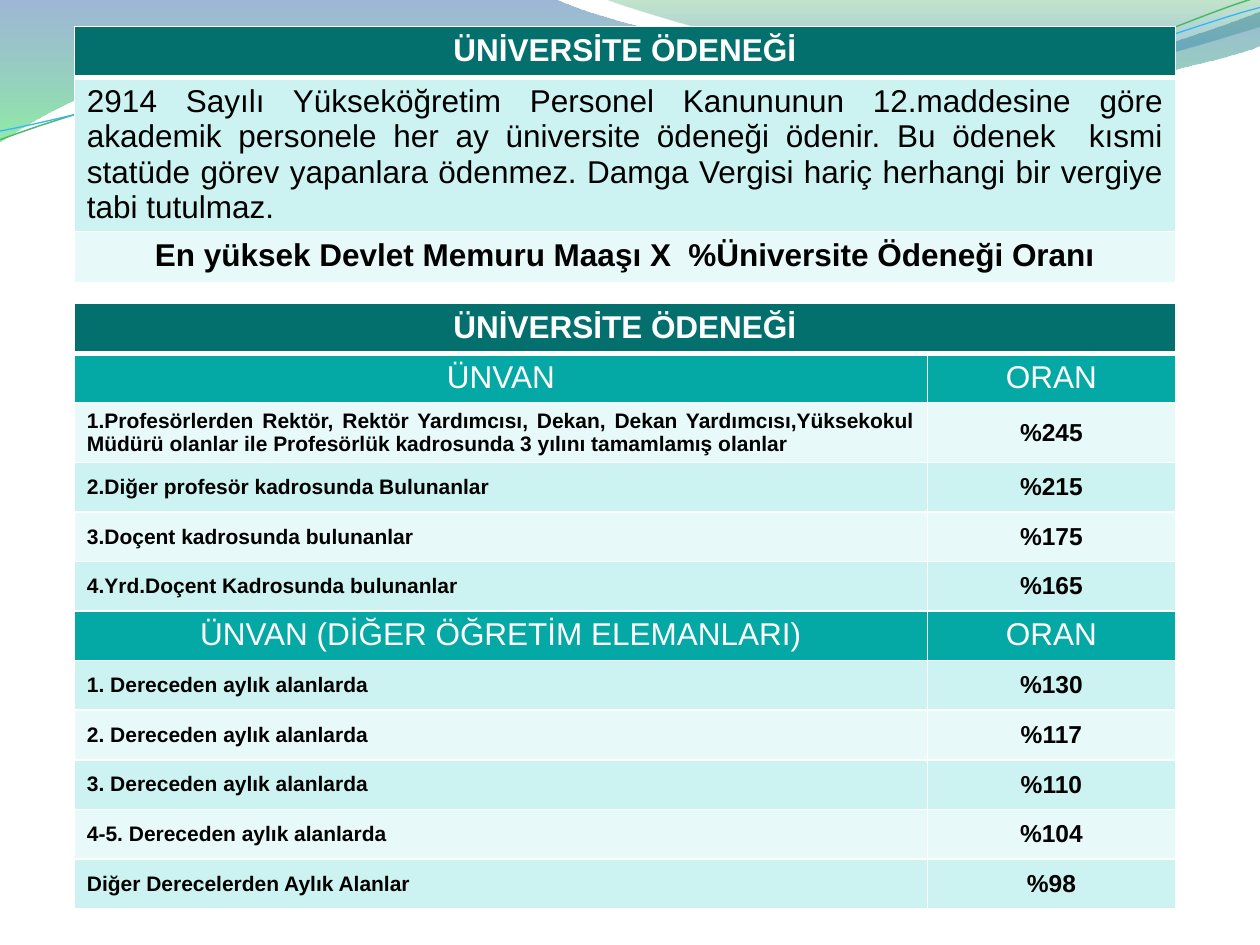
from dataclasses import dataclass
from math import cos, radians, sin
from typing import NamedTuple

from lxml.etree import SubElement
from pptx import Presentation
from pptx.dml.color import RGBColor
from pptx.enum.text import MSO_ANCHOR, PP_ALIGN
from pptx.oxml import parse_xml
from pptx.oxml.ns import nsdecls, qn
from pptx.util import Inches, Pt

HUES = {
    "head": "03706E", "band": "04A8A4", "mint": "CCF3F1", "pale": "E7F9F8",
    "white": "FFFFFF", "black": "000000", "blue": "2960A7", "lime": "35DA5E",
    "green": "36A752", "sky": "2472D3", "leaf": "50B86A", "cyan": "31B6FD",
}
LEFT, MID, FULL = PP_ALIGN.LEFT, PP_ALIGN.CENTER, PP_ALIGN.JUSTIFY
TILT = 2.7


class Stop(NamedTuple):
    at: float
    hue: str
    alpha: int


@dataclass
class Wave:
    start: tuple[float, float]
    curves: list[tuple[float, ...]]
    stops: tuple[Stop, ...] = ()
    hue: str = ""
    width: float = 0


class Text(NamedTuple):
    words: str
    size: int = 18
    bold: bool = True
    align: PP_ALIGN = MID


class Row(NamedTuple):
    fill: str
    cells: list[Text]


def rgb(hue: str) -> RGBColor:
    return RGBColor.from_string(HUES[hue])


def level(x: float, y: float) -> tuple[float, float]:
    turn = radians(TILT)
    dx, dy = x - 5, y - 0.57
    return 5 + dx * cos(turn) - dy * sin(turn), 0.57 + dx * sin(turn) + dy * cos(turn)


def place(wave: Wave, nums: tuple[float, ...]) -> list[tuple[int, int]]:
    pairs = list(zip(nums[::2], nums[1::2]))
    if not wave.stops:
        pairs = [level(x, y) for x, y in pairs]
    return [(Inches(x), Inches(y)) for x, y in pairs]


def draw_wave(slide, wave: Wave) -> None:
    legs = [place(wave, curve) for curve in wave.curves]
    pen = slide.shapes.build_freeform(*place(wave, wave.start)[0])
    pen.add_line_segments([leg[-1] for leg in legs], close=bool(wave.stops))
    shape = pen.convert_to_shape()
    for node, leg in zip(list(shape._element.iter(qn("a:lnTo"))), legs):
        if len(leg) == 3:
            node.tag = qn("a:cubicBezTo")
            for i, (x, y) in enumerate(leg[:2]):
                spot = {"x": str(x - shape.left), "y": str(y - shape.top)}
                node.insert(i, node.makeelement(qn("a:pt"), spot))
    shape.shadow.inherit = False
    if not wave.stops:
        shape.rotation = 360 - TILT
        shape.fill.background()
        shape.line.color.rgb = rgb(wave.hue)
        shape.line.width = Pt(wave.width)
        return
    shape.line.fill.background()
    shape.fill.gradient()
    shape.fill.gradient_angle = 270
    for mark, stop in zip(shape.fill.gradient_stops, wave.stops):
        mark.position = stop.at
        mark.color.rgb = rgb(stop.hue)
    tints = shape.fill._xPr.iter(qn("a:srgbClr"))
    for tint, stop in zip(list(tints), wave.stops):
        SubElement(tint, qn("a:alpha"), val=str(stop.alpha * 1000))


def edge(cell, top: int, low: int) -> None:
    props = cell._tc.get_or_add_tcPr()
    for spot, (side, width) in enumerate(zip("LRTB", (1, 1, top, low))):
        props.insert(spot, parse_xml(
            f'<a:ln{side} {nsdecls("a")} w="{Pt(width)}"><a:solidFill>'
            f'<a:srgbClr val="{HUES["white"]}"/></a:solidFill></a:ln{side}>'))


def write(cell, text: Text, hue: str) -> None:
    para = cell.text_frame.paragraphs[0]
    para.alignment = text.align
    run = para.add_run()
    run.text = text.words
    run.font.name = "Arial"
    run.font.size = Pt(text.size)
    run.font.bold = text.bold
    run.font.color.rgb = rgb(hue)


def draw_table(slide, top: float, high: float, base: float,
               cols: list[float], rows: list[Row]) -> None:
    frame = slide.shapes.add_table(len(rows), len(cols), Inches(0.59), Inches(top),
                                   Inches(sum(cols)), Inches(high))
    table = frame.table
    for col, wide in zip(table.columns, cols):
        col.width = Inches(wide)
    for i, row in enumerate(rows):
        table.rows[i].height = Inches(base / len(rows))
        for j in range(len(cols)):
            cell = table.cell(i, j)
            cell.fill.solid()
            cell.fill.fore_color.rgb = rgb(row.fill)
            edge(cell, 3 if i == 1 else 1, 3 if i == 0 else 1)
        if len(row.cells) < len(cols):
            table.cell(i, 0).merge(table.cell(i, len(cols) - 1))
        for j, text in enumerate(row.cells):
            cell = table.cell(i, j)
            if text.size < 18:
                cell.vertical_anchor = MSO_ANCHOR.MIDDLE
            write(cell, text, "white" if row.fill in ("head", "band") else "black")
    frame.height = Inches(high)


def band(words: str) -> Row:
    return Row("band", [Text(words, bold=False), Text("ORAN", bold=False)])


def rate(fill: str, words: str, share: int, align: PP_ALIGN = LEFT) -> Row:
    return Row(fill, [Text(words, 12, align=align), Text(f"%{share}", 14)])


WAVES = [
    Wave((0, 0), [(4.4, -0.01), (4.76, 0.17, 6.64, 0.63, 7.58, 0.63),
                  (8.53, 0.63, 9.58, 0.26, 10, 0.09), (10.01, 0.36),
                  (9.83, 0.44, 8.7, 0.76, 7.46, 0.75),
                  (6.22, 0.75, 3.82, 0.28, 2.57, 0.34),
                  (1.29, 0.36, 0.46, 0.83, -0.01, 1.13), (0, 0)],
         (Stop(0, "blue", 45), Stop(1, "lime", 55))),
    Wave((4.79, -0.01), [(5.09, 0.11, 6.82, 0.62, 7.69, 0.65),
                         (8.56, 0.69, 9.61, 0.32, 10, 0.21), (10, 0), (4.79, -0.01)],
         (Stop(0, "green", 30), Stop(0.8, "sky", 45))),
    Wave((0, 1.11), [(0.48, 0.93, 1.58, 0.57, 2.77, 0.52),
                     (3.95, 0.47, 5.93, 0.89, 7.13, 0.8),
                     (8.33, 0.71, 9.38, 0.15, 9.98, -0.02)], hue="leaf", width=0.85),
    Wave((0, 1.04), [(0.47, 0.96, 1.64, 0.61, 2.83, 0.56),
                     (4.03, 0.51, 5.97, 0.84, 7.17, 0.75),
                     (8.36, 0.67, 9.41, 0.21, 10, 0.06)], hue="cyan", width=0.75),
]
TITLE = Text("ÜNİVERSİTE ÖDENEĞİ")
RULES = [
    Row("head", [TITLE]),
    Row("mint", [Text("2914 Sayılı Yükseköğretim Personel Kanununun 12.maddesine göre "
                      "akademik personele her ay üniversite ödeneği ödenir. Bu ödenek  kısmi "
                      "statüde görev yapanlara ödenmez. Damga Vergisi hariç herhangi bir "
                      "vergiye tabi tutulmaz.", bold=False, align=FULL)]),
    Row("pale", [Text("En yüksek Devlet Memuru Maaşı X  %Üniversite Ödeneği Oranı")]),
]
RATES = [
    Row("head", [TITLE]),
    band("ÜNVAN"),
    rate("pale", "1.Profesörlerden Rektör, Rektör Yardımcısı, Dekan, Dekan "
         "Yardımcısı,Yüksekokul Müdürü olanlar ile Profesörlük kadrosunda 3 yılını "
         "tamamlamış olanlar", 245, FULL),
    rate("mint", "2.Diğer profesör kadrosunda Bulunanlar", 215),
    rate("pale", "3.Doçent kadrosunda bulunanlar", 175),
    rate("mint", "4.Yrd.Doçent Kadrosunda bulunanlar", 165),
    band("ÜNVAN (DİĞER ÖĞRETİM ELEMANLARI)"),
    rate("mint", "1. Dereceden aylık alanlarda", 130),
    rate("pale", "2. Dereceden aylık alanlarda", 117),
    rate("mint", "3. Dereceden aylık alanlarda", 110),
    rate("pale", "4-5. Dereceden aylık alanlarda", 104),
    rate("mint", "Diğer Derecelerden Aylık Alanlar", 98),
]


def main() -> None:
    deck = Presentation()
    deck.slide_width, deck.slide_height = Inches(10), Inches(7.5)
    slide = deck.slides.add_slide(deck.slide_layouts[6])
    for wave in WAVES:
        draw_wave(slide, wave)
    draw_table(slide, 0.21, 2.11, 1.22, [8.74], RULES)
    draw_table(slide, 2.41, 4.85, 4.72, [6.77, 1.97], RATES)
    deck.save("out.pptx")


if __name__ == "__main__":
    main()
